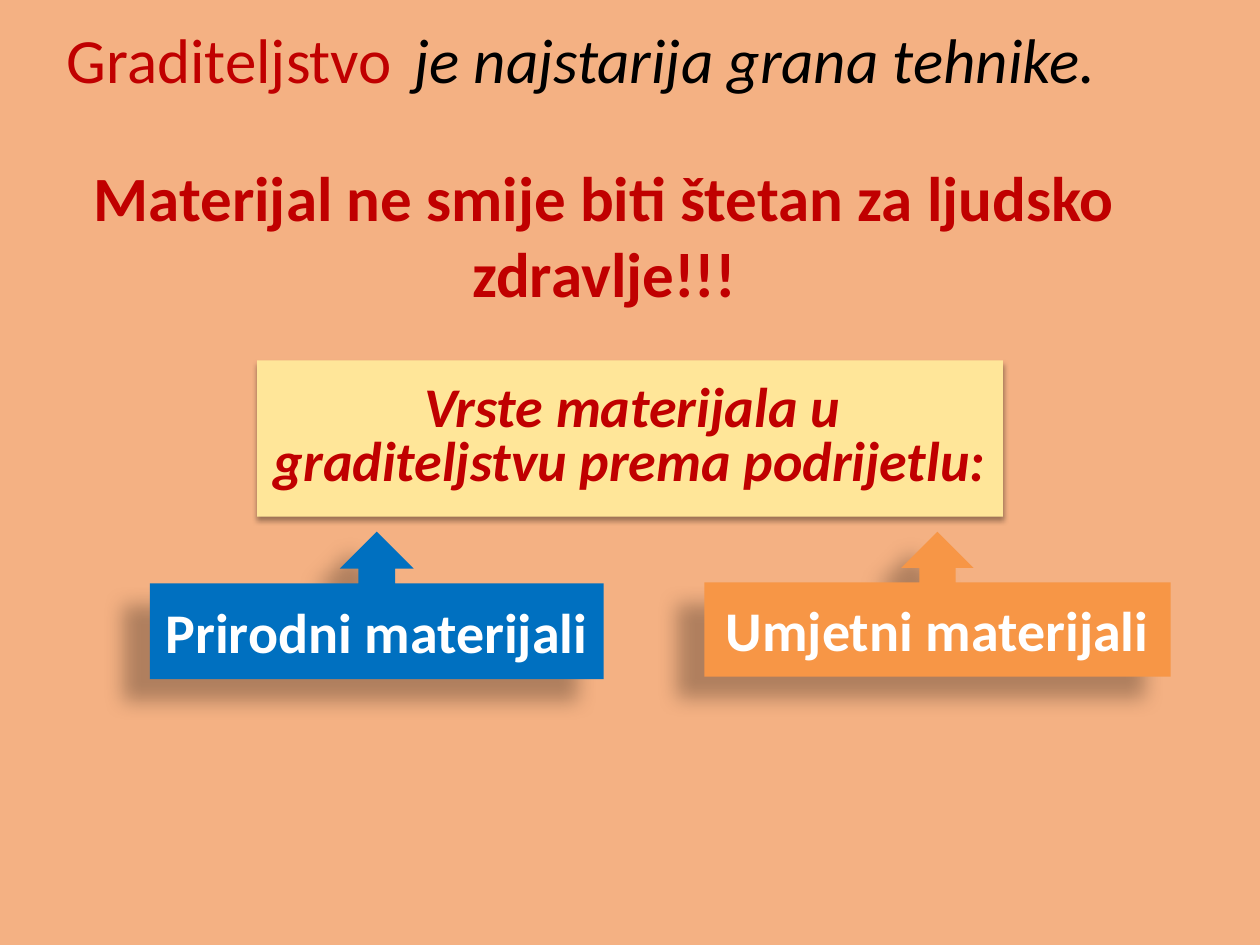
from dataclasses import dataclass

from lxml import etree
from pptx import Presentation
from pptx import util as u
from pptx.dml.color import RGBColor
from pptx.enum import shapes, text
from pptx.oxml.ns import qn


@dataclass(frozen=True)
class Theme:
    font: str = "Calibri"
    background: str = "F4B183"
    red: str = "C00000"
    black: str = "000000"
    white: str = "FFFFFF"
    cream: str = "FFE699"
    blue: str = "0070C0"
    orange: str = "F79646"
    heading: int = 36
    label: int = 32
    gap: int = 28
    small: int = 11
    soft_shadow: tuple = (35, 3.1, 1.8, 90)
    deep_shadow: tuple = (28, 11.8, 19.7, 141)


class SlideBuilder:
    def __init__(self, slide, theme):
        self.slide = slide
        self.theme = theme
        slide.background.fill.solid()
        slide.background.fill.fore_color.rgb = RGBColor.from_string(theme.background)

    def fill_text(self, frame, parts, align, anchor):
        frame.word_wrap = True
        frame.vertical_anchor = anchor
        paragraph = frame.paragraphs[0]
        paragraph.alignment = align
        for words, size, color, bold, italic in parts:
            run = paragraph.add_run()
            run.text = words
            font = run.font
            font.name = self.theme.font
            font.size = u.Pt(size)
            font.bold = bold
            font.italic = italic
            font.color.rgb = RGBColor.from_string(color)
        return paragraph

    def title(self, box, parts):
        heading = self.slide.shapes.title
        heading.left, heading.top, heading.width, heading.height = map(u.Inches, box)
        frame = heading.text_frame
        frame.auto_size = text.MSO_AUTO_SIZE.SHAPE_TO_FIT_TEXT
        return self.fill_text(frame, parts, text.PP_ALIGN.LEFT, text.MSO_ANCHOR.TOP)

    def statement(self, box, parts):
        frame = self.slide.shapes.add_textbox(*map(u.Inches, box)).text_frame
        frame.auto_size = text.MSO_AUTO_SIZE.SHAPE_TO_FIT_TEXT
        self.fill_text(frame, parts, text.PP_ALIGN.CENTER, text.MSO_ANCHOR.TOP)

    def panel(self, kind, box, fill, shadow, parts):
        panel = self.slide.shapes.add_shape(kind, *map(u.Inches, box))
        panel.fill.solid()
        panel.fill.fore_color.rgb = RGBColor.from_string(fill)
        panel.line.fill.background()
        self.cast_shadow(panel, *shadow)
        return self.fill_text(
            panel.text_frame, parts, text.PP_ALIGN.CENTER, text.MSO_ANCHOR.MIDDLE)

    def cast_shadow(self, panel, opacity, blur, distance, angle):
        panel.shadow.inherit = False
        effects = panel._element.spPr.find(qn("a:effectLst"))
        shadow = etree.SubElement(
            effects, qn("a:outerShdw"), blurRad=str(u.Pt(blur)), dist=str(u.Pt(distance)),
            dir=str(angle * 60000), algn="ctr", rotWithShape="0")
        color = etree.SubElement(shadow, qn("a:srgbClr"), val=self.theme.black)
        etree.SubElement(color, qn("a:alpha"), val=str(opacity * 1000))


def main():
    theme = Theme()
    deck = Presentation()
    deck.slide_width, deck.slide_height = u.Inches(10), u.Inches(7.5)
    page = SlideBuilder(deck.slides.add_slide(deck.slide_layouts[5]), theme)

    page.statement((0.21, 1.21, 9.17, 1.31), [
        ("Materijal ne smije biti štetan za ljudsko zdravlje!!!",
         theme.heading, theme.red, True, False)])

    heading = page.title((0.43, 0.11, 8.54, 0.71), [
        ("Graditeljstvo", theme.heading, theme.red, False, False),
        (" ", theme.gap, theme.red, True, True),
        ("je najstarija grana tehnike.", theme.heading, theme.black, False, True)])
    heading.runs[1].font._element.set("spc", "630")

    origins = page.panel(
        shapes.MSO_SHAPE.RECTANGLE, (2.04, 2.86, 5.92, 1.24), theme.cream, theme.soft_shadow, [
            (" ", theme.small, theme.red, True, True),
            ("Vrste materijala u graditeljstvu prema podrijetlu:",
             theme.label, theme.red, True, True)])
    origins.line_spacing = 0.8

    for words, left, width, height, fill in (
        ("Prirodni materijali", 1.19, 3.6, 1.17, theme.blue),
        ("Umjetni materijali", 5.59, 3.7, 1.15, theme.orange),
    ):
        page.panel(
            shapes.MSO_SHAPE.UP_ARROW_CALLOUT, (left, 4.22, width, height), fill,
            theme.deep_shadow, [(words, theme.label, theme.white, True, False)])

    deck.save("out.pptx")


if __name__ == "__main__":
    main()
